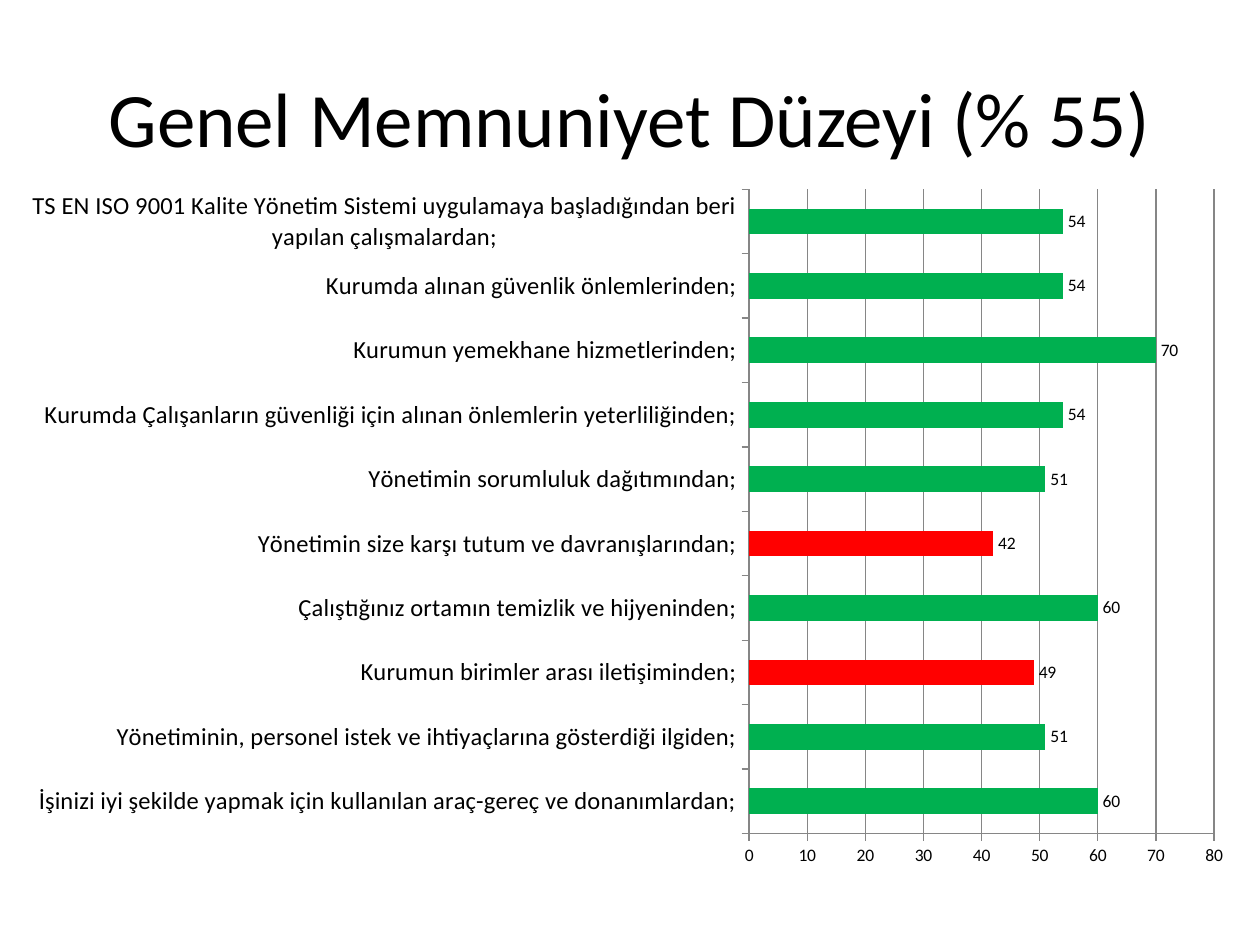
from lxml.etree import SubElement
from pptx import Presentation
from pptx.chart.data import CategoryChartData
from pptx.dml.color import RGBColor
from pptx.enum.chart import XL_CHART_TYPE, XL_LABEL_POSITION, XL_TICK_MARK
from pptx.enum.text import MSO_ANCHOR, PP_ALIGN
from pptx.oxml.ns import qn
from pptx.util import Inches, Pt

TITLE = "Genel Memnuniyet Düzeyi (% 55)"
TITLE_BOX = (0.5, 0.3, 9, 1.25)
CHART_BOX = (0.12, 1.39, 9.71, 5.62)
PLOT_BOX = {"x": 0.6, "y": 0.02, "w": 0.38, "h": 0.91}
SATISFACTION = [
    ("İşinizi iyi şekilde yapmak için kullanılan araç-gereç ve donanımlardan;", 60),
    ("Yönetiminin, personel istek ve ihtiyaçlarına gösterdiği ilgiden;", 51),
    ("Kurumun birimler arası iletişiminden;", 49),
    ("Çalıştığınız ortamın temizlik ve hijyeninden;", 60),
    ("Yönetimin size karşı tutum ve davranışlarından;", 42),
    ("Yönetimin sorumluluk dağıtımından;", 51),
    ("Kurumda Çalışanların güvenliği için alınan önlemlerin yeterliliğinden;", 54),
    ("Kurumun yemekhane hizmetlerinden;", 70),
    ("Kurumda alınan güvenlik önlemlerinden;", 54),
    ("TS EN ISO 9001 Kalite Yönetim Sistemi uygulamaya başladığından beri "
     "yapılan çalışmalardan;", 54),
]
LOW_LIMIT = 50
GREEN, RED, GREY, BLACK = "00B050", "FF0000", "868686", "000000"


def set_all(target, values):
    for name, value in values.items():
        setattr(target, name, value)


def set_color(color_format, value):
    color_format.rgb = RGBColor.from_string(value)


def set_font(font, size):
    set_all(font, {"name": "Calibri", "size": Pt(size), "bold": False})
    set_color(font.color, BLACK)


def set_fill(fill, value):
    fill.solid()
    set_color(fill.fore_color, value)


def set_line(line, value):
    line.width = Pt(0.75)
    set_color(line.color, value)


def place_plot(chart):
    plot_area = chart._chartSpace.chart.plotArea
    for old_layout in plot_area.findall(qn("c:layout")):
        plot_area.remove(old_layout)
    layout = SubElement(plot_area, qn("c:layout"))
    plot_area.insert(0, layout)
    manual = SubElement(layout, qn("c:manualLayout"))
    settings = {"layoutTarget": "inner", "xMode": "edge", "yMode": "edge", **PLOT_BOX}
    for name, value in settings.items():
        SubElement(manual, qn("c:" + name)).set("val", str(value))


def add_title(slide):
    title = slide.shapes.title
    set_all(title, dict(zip(("left", "top", "width", "height"), map(Inches, TITLE_BOX))))
    title.text_frame.text = TITLE
    title.text_frame.vertical_anchor = MSO_ANCHOR.MIDDLE
    paragraph = title.text_frame.paragraphs[0]
    paragraph.alignment = PP_ALIGN.CENTER
    set_font(paragraph.runs[0].font, 44)


def add_satisfaction_chart(slide):
    data = CategoryChartData(number_format="0")
    data.categories = [question for question, _ in SATISFACTION]
    data.add_series("Series 1", [score for _, score in SATISFACTION])
    chart = slide.shapes.add_chart(
        XL_CHART_TYPE.BAR_CLUSTERED, *map(Inches, CHART_BOX), data).chart
    set_all(chart, {"has_legend": False, "has_title": False})
    set_font(chart.font, 10)
    place_plot(chart)

    for axis, size in ((chart.category_axis, 14), (chart.value_axis, 10)):
        set_all(axis, {"major_tick_mark": XL_TICK_MARK.OUTSIDE,
                       "minor_tick_mark": XL_TICK_MARK.NONE})
        set_font(axis.tick_labels.font, size)
        set_line(axis.format.line, GREY)
    set_all(chart.value_axis, {"minimum_scale": 0, "maximum_scale": 80,
                               "major_unit": 10, "has_major_gridlines": True})
    set_all(chart.value_axis.tick_labels,
            {"number_format": "0", "number_format_is_linked": False})
    set_line(chart.value_axis.major_gridlines.format.line, GREY)

    plot = chart.plots[0]
    set_all(plot, {"gap_width": 150, "vary_by_categories": False, "has_data_labels": True})
    set_all(plot.data_labels, {"show_value": True, "number_format": "0",
                               "number_format_is_linked": False,
                               "position": XL_LABEL_POSITION.OUTSIDE_END})
    set_font(plot.data_labels.font, 10)
    series = plot.series[0]
    set_fill(series.format.fill, GREEN)
    for index, (_, score) in enumerate(SATISFACTION):
        if score < LOW_LIMIT:
            set_fill(series.points[index].format.fill, RED)


def main():
    presentation = Presentation()
    set_all(presentation, {"slide_width": Inches(10), "slide_height": Inches(7.5)})
    slide = presentation.slides.add_slide(presentation.slide_layouts[5])
    add_title(slide)
    add_satisfaction_chart(slide)
    presentation.save("out.pptx")


if __name__ == "__main__":
    main()
